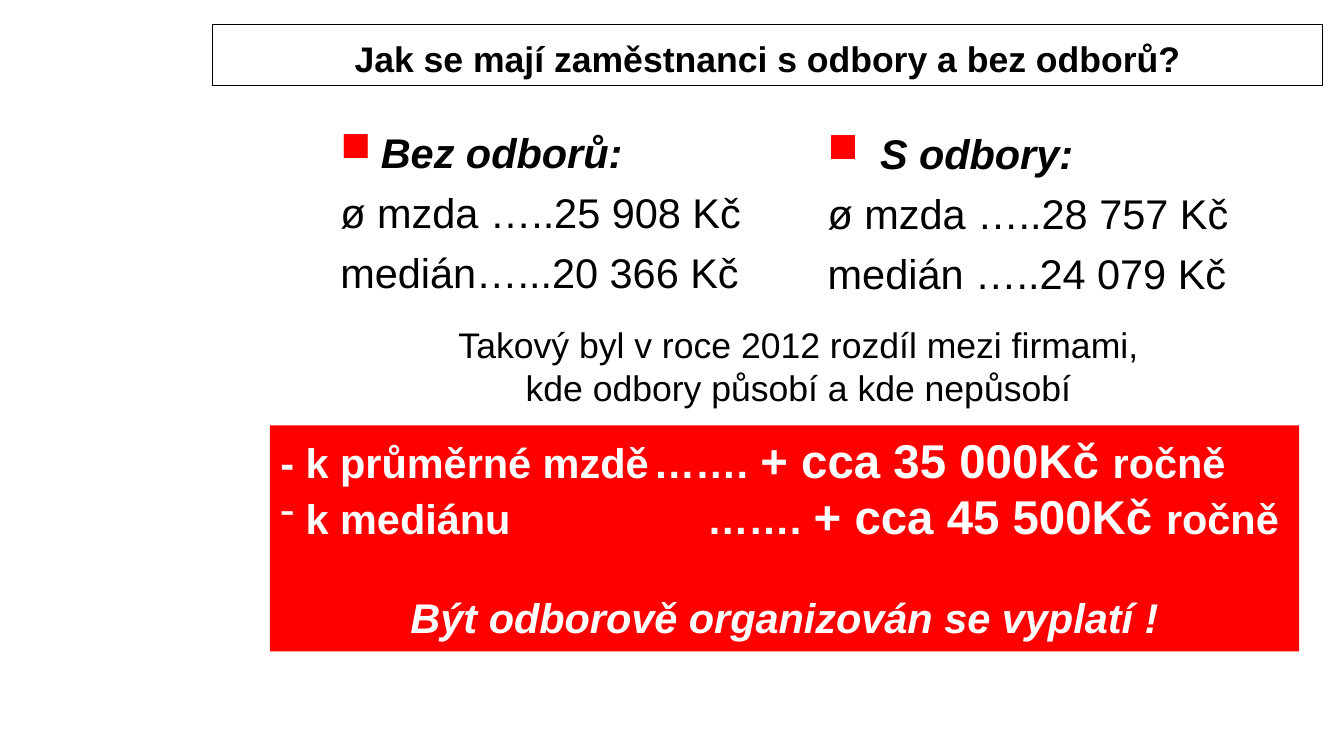
from lxml.etree import SubElement
from pptx import Presentation
from pptx.dml.color import RGBColor
from pptx.enum.shapes import MSO_SHAPE as SHAPE
from pptx.enum.text import MSO_ANCHOR as ANCHOR, MSO_AUTO_SIZE as AUTO, PP_ALIGN as ALIGN
from pptx.oxml.ns import qn
from pptx.util import Inches, Pt

COLORS = {"text": "000000", "accent": "FF0000", "light": "FFFFFF"}
FONT = "Arial"


def rgb(name):
    return RGBColor.from_string(COLORS[name])


def style(r, size, color="text", bold=False, italic=False):
    r.font.name, r.font.size = FONT, Pt(size)
    r.font.bold, r.font.italic = bold, italic
    r.font.color.rgb = rgb(color)


def place(sp, box):
    sp.left, sp.top, sp.width, sp.height = [Inches(v) for v in box]


def indent(p, hang):
    pPr = p._p.get_or_add_pPr()
    pPr.set("marL", str(Inches(hang)))
    pPr.set("indent", str(-Inches(hang)))
    return pPr


def add_bullet(pPr, char, color=None):
    if color:
        clr = SubElement(pPr, qn("a:buClr"))
        SubElement(clr, qn("a:srgbClr")).set("val", COLORS[color])
    SubElement(pPr, qn("a:buFontTx"))
    SubElement(pPr, qn("a:buChar")).set("char", char)


def add_tabs(pPr, stops):
    tabs = SubElement(pPr, qn("a:tabLst"))
    for stop in stops:
        tab = SubElement(tabs, qn("a:tab"))
        tab.set("pos", str(Inches(stop)))
        tab.set("algn", "l")


def add_box(slide, box):
    sp = slide.shapes.add_shape(SHAPE.RECTANGLE, *[Inches(v) for v in box])
    sp.shadow.inherit = False
    sp.text_frame.word_wrap = True
    return sp


# Sentence that explains the comparison
def fill_summary(sp, box):
    place(sp, box)
    tf = sp.text_frame
    tf.text = "Takový byl v roce 2012 rozdíl mezi firmami,\vkde odbory působí a kde nepůsobí"
    tf.auto_size, tf.vertical_anchor = AUTO.NONE, ANCHOR.BOTTOM
    p = tf.paragraphs[0]
    p.alignment = ALIGN.CENTER
    for r in p.runs:
        style(r, 24)


# Column with a bulleted heading and two wage lines
def fill_wages(sp, box, heading, lines, heading_indent):
    place(sp, box)
    tf = sp.text_frame
    tf.text = "\n".join([heading, *lines])
    tf.auto_size, tf.vertical_anchor = AUTO.NONE, ANCHOR.TOP
    for i, p in enumerate(tf.paragraphs):
        first = i == 0
        pPr = indent(p, heading_indent if first else 0.38)
        if first:
            add_bullet(pPr, "■", "accent")
        else:
            SubElement(pPr, qn("a:buNone"))
        p.space_before = Pt(0 if first else 7)
        style(p.runs[0], 28, bold=first, italic=first)


# Red panel with the yearly gain
def add_gain_panel(slide, box):
    sp = add_box(slide, box)
    sp.fill.solid()
    sp.fill.fore_color.rgb = rgb("accent")
    sp.line.fill.background()
    tf = sp.text_frame
    tf.vertical_anchor = ANCHOR.TOP
    rows = [("- k průměrné mzdě", "+ cca 35 000Kč ", None),
            (" k mediánu", "+ cca 45 500Kč ", "-")]
    for i, (label, gain, bullet) in enumerate(rows):
        p = tf.add_paragraph() if i else tf.paragraphs[0]
        p.alignment = ALIGN.LEFT
        pPr = indent(p, 0)
        if bullet:
            add_bullet(pPr, bullet)
        add_tabs(pPr, (4, 5))
        for text, size in ((f"{label}\t…….\t", 28), (gain, 32), ("ročně", 28)):
            r = p.add_run()
            r.text = text
            style(r, size, "light", bold=True)
    p = tf.add_paragraph()
    p.text = "Být odborově organizován se vyplatí !"
    p.alignment = ALIGN.CENTER
    p.space_before = Pt(32)
    style(p.runs[0], 28, "light", bold=True, italic=True)


# Framed heading at the top
def add_heading(slide, box):
    sp = add_box(slide, box)
    sp.fill.background()
    sp.line.color.rgb = rgb("text")
    sp.line.width = Pt(0.75)
    tf = sp.text_frame
    tf.text = "Jak se mají zaměstnanci s odbory a bez odborů?"
    tf.vertical_anchor = ANCHOR.BOTTOM
    p = tf.paragraphs[0]
    p.alignment = ALIGN.CENTER
    style(p.runs[0], 24, bold=True)


def main():
    prs = Presentation()
    prs.slide_width, prs.slide_height = Inches(12.6), Inches(7.09)
    slide = prs.slides.add_slide(prs.slide_layouts[3])
    without_unions, with_unions = list(slide.placeholders)[1:3]

    fill_summary(slide.shapes.title, (2.13, 3.13, 10.71, 0.75))
    fill_wages(without_unions, (3.09, 1.14, 5.25, 4.25), "Bez odborů:",
               ["ø mzda …..25 908 Kč", "medián…...20 366 Kč"], 0.38)
    fill_wages(with_unions, (7.66, 1.15, 4.26, 3.41), "S odbory:",
               ["ø mzda …..28 757 Kč", "medián …..24 079 Kč"], 0.49)
    add_gain_panel(slide, (2.53, 3.99, 9.65, 2.12))
    add_heading(slide, (1.99, 0.23, 10.41, 0.57))
    prs.save("out.pptx")


if __name__ == "__main__":
    main()
